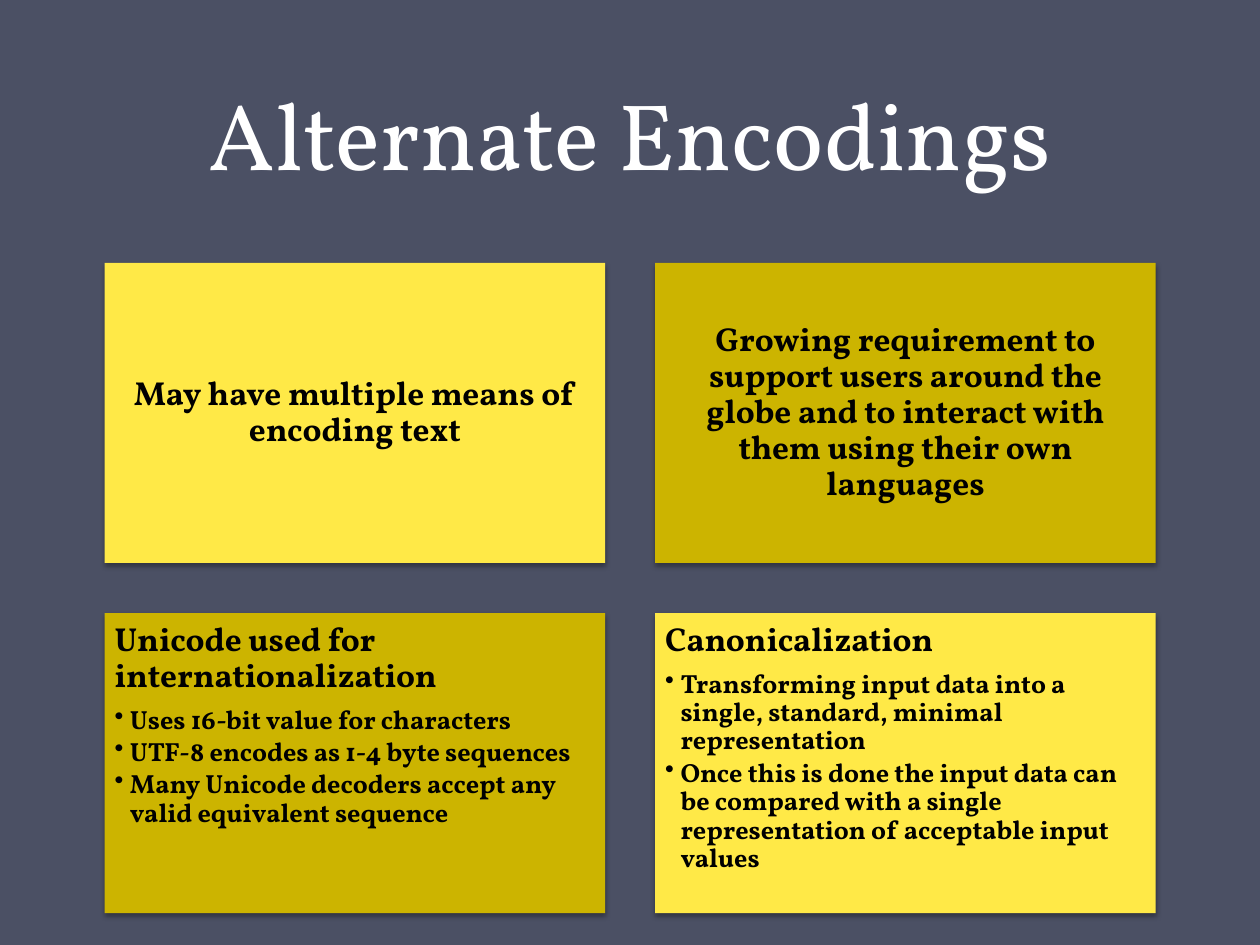
from dataclasses import dataclass

from lxml.etree import SubElement
from pptx import Presentation
from pptx.dml.color import RGBColor
from pptx.enum.shapes import MSO_SHAPE
from pptx.enum.text import MSO_ANCHOR, PP_ALIGN
from pptx.oxml.ns import qn
from pptx.util import Cm, Pt


@dataclass(frozen=True)
class Theme:
    font: str = "Vollkorn"
    background: RGBColor = RGBColor(0x4B, 0x50, 0x64)
    title: RGBColor = RGBColor(0xFF, 0xFF, 0xFF)
    text: RGBColor = RGBColor(0, 0, 0)
    bright: RGBColor = RGBColor(0xFF, 0xE9, 0x47)
    dark: RGBColor = RGBColor(0xCC, 0xB4, 0x00)
    title_size: Pt = Pt(54)
    heading_size: Pt = Pt(19)
    heading_gap: Pt = Pt(6.65)
    bullet_size: Pt = Pt(15)
    bullet_gap: Pt = Pt(2.25)


THEME = Theme()


def write(paragraph, wording, size, color, bold, **layout):
    """Fill a paragraph with one run; layout holds paragraph attributes."""
    run = paragraph.add_run()
    run.text = wording
    run.font.color.rgb = color
    for name, value in {"name": THEME.font, "size": size, "bold": bold}.items():
        setattr(run.font, name, value)
    for name, value in layout.items():
        setattr(paragraph, name, value)


def add_soft_shadow(card):
    card.shadow.inherit = False
    effects = card._element.spPr.find(qn("a:effectLst"))
    shadow = SubElement(effects, qn("a:outerShdw"), blurRad=str(Pt(3.1)),
                        dist=str(Pt(1.8)), dir="5400000", rotWithShape="0")
    black = SubElement(shadow, qn("a:srgbClr"), val="000000")
    SubElement(black, qn("a:alpha"), val="35000")


deck = Presentation()
deck.slide_width, deck.slide_height = Cm(25.4), Cm(19.05)
slide = deck.slides.add_slide(deck.slide_layouts[6])
slide.background.fill.solid()
slide.background.fill.fore_color.rgb = THEME.background

title = slide.shapes.add_textbox(Cm(1.27), Cm(0), Cm(22.86), Cm(3.94)).text_frame
title.word_wrap = True
title.vertical_anchor = MSO_ANCHOR.BOTTOM
write(title.paragraphs[0], "Alternate Encodings", THEME.title_size, THEME.title,
      False, alignment=PP_ALIGN.CENTER, line_spacing=Pt(58))

topics = [
    ("May have multiple means of encoding text", []),
    ("Growing requirement to support users around the globe and to interact "
     "with them using their own languages", []),
    ("Unicode used for internationalization", [
        "Uses 16-bit value for characters",
        "UTF-8 encodes as 1-4 byte sequences",
        "Many Unicode decoders accept any valid equivalent sequence",
    ]),
    ("Canonicalization", [
        "Transforming input data into a single, standard, minimal representation",
        "Once this is done the input data can be compared with a single "
        "representation of acceptable input values",
    ]),
]

left, top = 2.11, 5.3
width, height, gap = 10.09, 6.05, 1.01
inset = Cm(0.2)
bullet_indent = Cm(0.31)

for index, (heading, bullets) in enumerate(topics):
    row, column = divmod(index, 2)
    card = slide.shapes.add_shape(
        MSO_SHAPE.RECTANGLE,
        Cm(left + column * (width + gap)), Cm(top + row * (height + gap)),
        Cm(width), Cm(height))
    card.fill.solid()
    card.fill.fore_color.rgb = THEME.dark if (row + column) % 2 else THEME.bright
    card.line.fill.background()
    add_soft_shadow(card)

    body = card.text_frame
    frame_format = {
        "word_wrap": True,
        "vertical_anchor": MSO_ANCHOR.TOP if bullets else MSO_ANCHOR.MIDDLE,
        "margin_left": inset, "margin_top": inset,
        "margin_right": inset, "margin_bottom": inset,
    }
    for name, value in frame_format.items():
        setattr(body, name, value)

    write(body.paragraphs[0], heading, THEME.heading_size, THEME.text, True,
          alignment=PP_ALIGN.LEFT if bullets else PP_ALIGN.CENTER,
          line_spacing=0.9, space_after=THEME.heading_gap)
    for bullet in bullets:
        paragraph = body.add_paragraph()
        write(paragraph, bullet, THEME.bullet_size, THEME.text, True, level=1,
              alignment=PP_ALIGN.LEFT, line_spacing=0.9,
              space_after=THEME.bullet_gap)
        properties = paragraph._p.get_or_add_pPr()
        properties.set("marL", str(bullet_indent))
        properties.set("indent", str(-bullet_indent))
        SubElement(properties, qn("a:buChar"), char="•")

deck.save("out.pptx")
